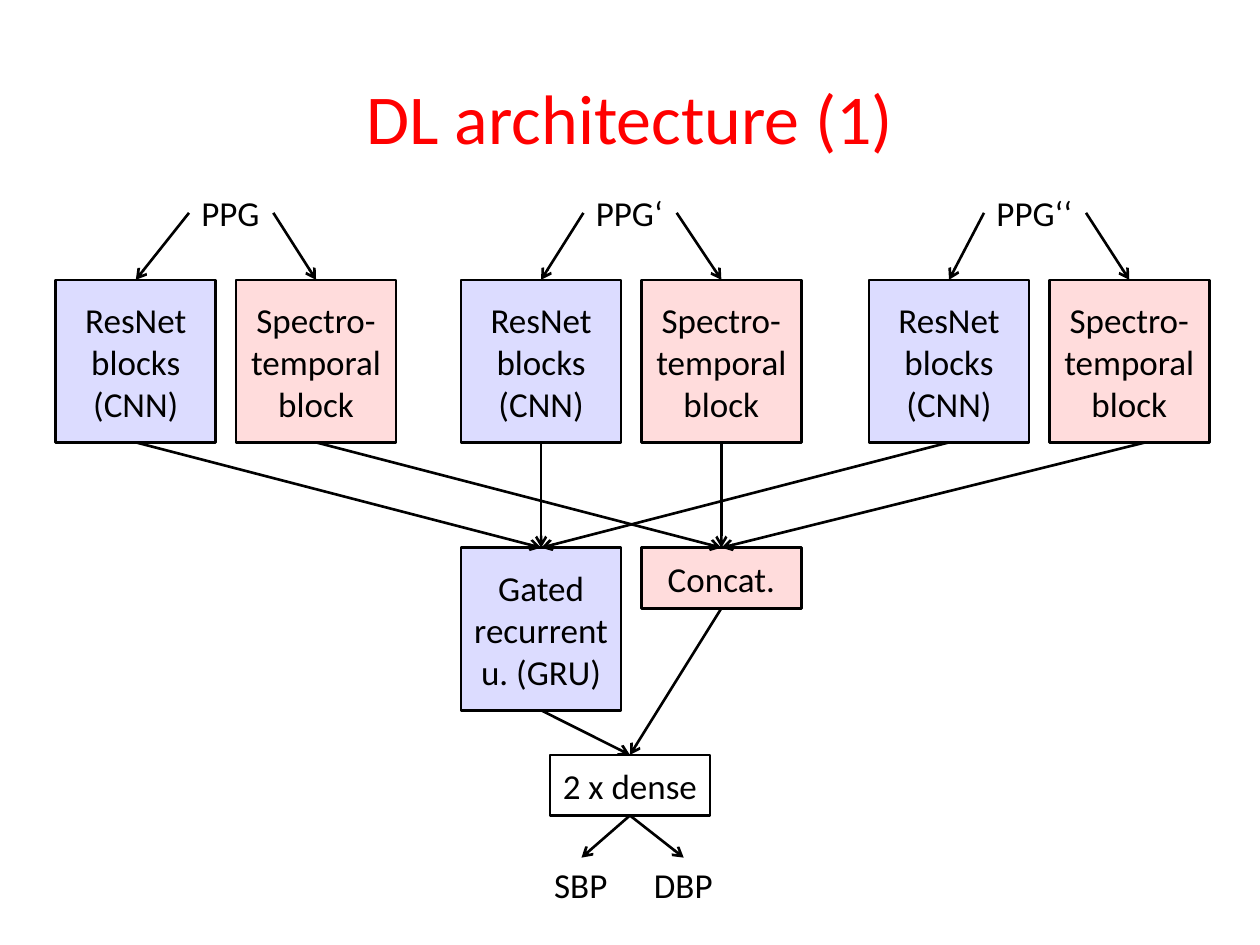
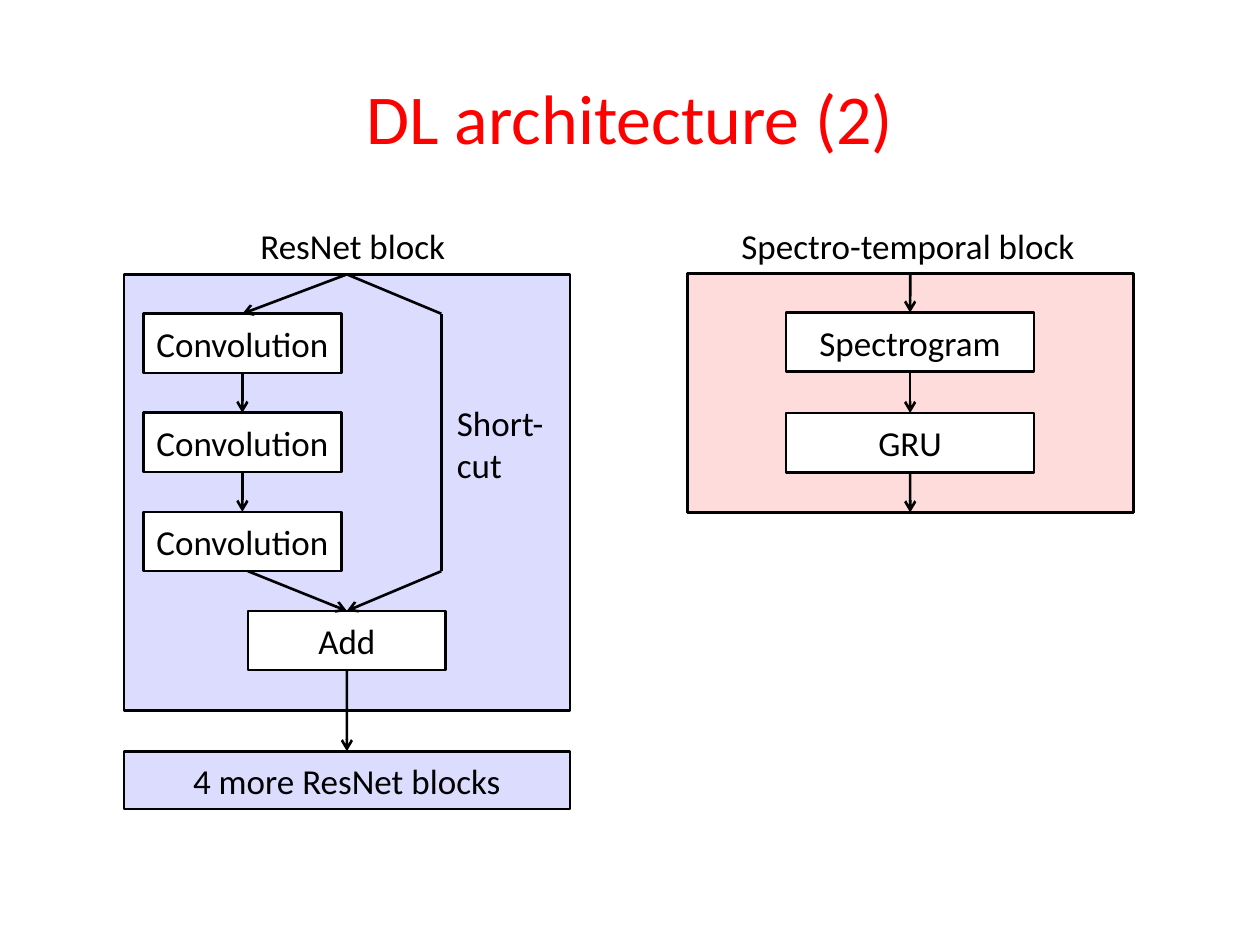
import pptx
import pptx.dml.color
import pptx.enum.shapes
import pptx.enum.text
import pptx.oxml
import pptx.oxml.ns
import pptx.util

BLUE, PINK, WHITE, BLACK, RED = "DCDCFF", "FFDCDC", "FFFFFF", "000000", "FF0000"
TOP, LEFT, BOTTOM, RIGHT = range(4)
BODY_FONT = {"name": "Calibri", "size": pptx.util.Pt(20)}
TITLE_FONT = {"name": "Calibri", "size": pptx.util.Pt(40)}
TITLE_PLACE = (36, 21.6, 648, 90)
LINE_WIDTH = 1.5
LABEL_HEIGHT = 31.7

BLOCK = (91.44, 92.9)
BAR = (91.44, 34.6)
PAIR_STEP = 103
BRANCH_TOP, MERGE_TOP = 159.9, 313
SIGNALS = [
    ("PPG", 108, 48.2, 31.9),
    ("PPG‘", 333.4, 53.3, 263.5),
    ("PPG‘‘", 562.3, 58.3, 496.6),
]
MERGE_LEFT = SIGNALS[1][3]

CONVOLUTION = (113.04, 33.9)
STAGE = (141.8, 33.9)
PANEL_WIDTH = 254.9
RESNET_LEFT, SPECTRO_LEFT, STAGE_LEFT = 70.8, 392.7, 449.2
CONVOLUTION_LEFT, ADD_LEFT = 82, 141.7
ROW_TOPS = [179.3 + 56.6 * row for row in range(4)]
SHORTCUT_X = 252.2


def overview():
    """Return the boxes, labels and links of the whole network."""
    boxes = {
        "GRU": ("Gated recurrent u. (GRU)", MERGE_LEFT, MERGE_TOP, *BLOCK, BLUE),
        "Concat": ("Concat.", MERGE_LEFT + PAIR_STEP, MERGE_TOP, *BAR, PINK),
        "Dense": ("2 x dense", 314.28, 431.4, *BAR, None),
    }
    labels = {
        "SBP": ("SBP", 309.6, 490.1, 45.4),
        "DBP": ("DBP", 366.6, 490.1, 48.2),
    }
    links = [
        (("GRU", BOTTOM), ("Dense", TOP)),
        (("Concat", BOTTOM), ("Dense", TOP)),
        (("Dense", BOTTOM), ("SBP", TOP)),
        (("Dense", BOTTOM), ("DBP", TOP)),
    ]
    for signal, label_left, label_width, left in SIGNALS:
        resnet, spectro = signal + " ResNet", signal + " spectro"
        labels[signal] = (signal, label_left, 105.8, label_width)
        boxes[resnet] = ("ResNet blocks\n(CNN)", left, BRANCH_TOP, *BLOCK, BLUE)
        boxes[spectro] = ("Spectro-temporal block", left + PAIR_STEP, BRANCH_TOP, *BLOCK, PINK)
        last = signal == SIGNALS[-1][0]
        spectro_exit = (654.5, BRANCH_TOP + BLOCK[1]) if last else (spectro, BOTTOM)
        links += [
            ((signal, LEFT), (resnet, TOP)),
            ((signal, RIGHT), (spectro, TOP)),
            ((resnet, BOTTOM), ("GRU", TOP)),
            (spectro_exit, ("Concat", TOP)),
        ]
    return boxes, labels, links, []


def block_details():
    """Return the boxes, labels and links inside the two block types."""
    boxes = {
        "ResNet panel": ("", RESNET_LEFT, 156.8, PANEL_WIDTH, 249.1, BLUE),
        "More blocks": ("4 more ResNet blocks", RESNET_LEFT, 429.3, PANEL_WIDTH, 33, BLUE),
        "Spectro panel": ("", SPECTRO_LEFT, 156.2, PANEL_WIDTH, 136.6, PINK),
        "Spectrogram": ("Spectrogram", STAGE_LEFT, 178.6, *STAGE, WHITE),
        "GRU": ("GRU", STAGE_LEFT, 236, *STAGE, WHITE),
        "Add": ("Add", ADD_LEFT, ROW_TOPS[3], *CONVOLUTION, WHITE),
    }
    for row, top in enumerate(ROW_TOPS[:3], 1):
        boxes[f"Convolution {row}"] = ("Convolution", CONVOLUTION_LEFT, top, *CONVOLUTION, WHITE)
    labels = {
        "ResNet heading": ("ResNet block", 141.7, 124.9, 121),
        "Spectro heading": ("Spectro-temporal block", 416.6, 124.9, 206.6),
        "Shortcut": ("Short-\vcut", 254, 225.6, 64.8),
    }
    shortcut_top = (SHORTCUT_X, ROW_TOPS[0])
    shortcut_bottom = (SHORTCUT_X, ROW_TOPS[2] + CONVOLUTION[1])
    links = [
        (("ResNet panel", TOP), ("Convolution 1", TOP)),
        (("Convolution 1", BOTTOM), ("Convolution 2", TOP)),
        (("Convolution 2", BOTTOM), ("Convolution 3", TOP)),
        ((ADD_LEFT, shortcut_bottom[1]), ("Add", TOP)),
        (shortcut_bottom, ("Add", TOP)),
        (("Add", BOTTOM), ("More blocks", TOP)),
        (("Spectro panel", TOP), ("Spectrogram", TOP)),
        (("Spectrogram", BOTTOM), ("GRU", TOP)),
        (("GRU", BOTTOM), ("Spectro panel", BOTTOM)),
    ]
    plain_lines = [
        (("ResNet panel", TOP), shortcut_top),
        (shortcut_top, shortcut_bottom),
    ]
    return boxes, labels, links, plain_lines


PAGES = [("DL architecture (1)", overview()), ("DL architecture (2)", block_details())]


def colour(code):
    """Turn a hex string into a colour."""
    return pptx.dml.color.RGBColor.from_string(code)


def points(*lengths):
    """Turn numbers into lengths in points."""
    return [pptx.util.Pt(length) for length in lengths]


def write(box, text, font, code, centred=True):
    """Fill a box with formatted paragraphs."""
    frame = box.text_frame
    frame.text = text
    for para in frame.paragraphs:
        if centred:
            para.alignment = pptx.enum.text.PP_ALIGN.CENTER
        for span in para.runs:
            for key, value in font.items():
                setattr(span.font, key, value)
            span.font.color.rgb = colour(code)


def outline(line):
    """Give a line the shared width and colour."""
    line.width = pptx.util.Pt(LINE_WIDTH)
    line.color.rgb = colour(BLACK)


def add_box(page, text, left, top, width, height, fill):
    """Add an outlined rectangle with centred text."""
    box = page.shapes.add_shape(
        pptx.enum.shapes.MSO_SHAPE.RECTANGLE, *points(left, top, width, height))
    box.shadow.inherit = False
    if fill:
        box.fill.solid()
        box.fill.fore_color.rgb = colour(fill)
    else:
        box.fill.background()
    outline(box.line)
    box.text_frame.vertical_anchor = pptx.enum.text.MSO_ANCHOR.MIDDLE
    if text:
        write(box, text, BODY_FONT, BLACK)
    return box


def add_label(page, text, left, top, width):
    """Add free text that does not wrap."""
    height = LABEL_HEIGHT + 24 * text.count("\v")
    box = page.shapes.add_textbox(*points(left, top, width, height))
    box.text_frame.word_wrap = False
    box.text_frame.auto_size = pptx.enum.text.MSO_AUTO_SIZE.SHAPE_TO_FIT_TEXT
    write(box, text, BODY_FONT, BLACK, centred=False)
    return box


def add_link(page, parts, start, end, arrow):
    """Draw a line between two box sides or free points."""
    free = [(0, 0) if isinstance(place[0], str) else place for place in (start, end)]
    link = page.shapes.add_connector(
        pptx.enum.shapes.MSO_CONNECTOR.STRAIGHT, *points(*free[0], *free[1]))
    for place, join in ((start, link.begin_connect), (end, link.end_connect)):
        if isinstance(place[0], str):
            join(parts[place[0]], place[1])
    outline(link.line)
    properties = link._element.spPr
    if arrow:
        head = pptx.oxml.parse_xml(
            f'<a:tailEnd {pptx.oxml.ns.nsdecls("a")} type="arrow"/>')
        properties.find(pptx.oxml.ns.qn("a:ln")).append(head)
    properties.append(pptx.oxml.parse_xml(f'<a:effectLst {pptx.oxml.ns.nsdecls("a")}/>'))


def add_page(deck, title, content):
    """Add a slide with its title and diagram."""
    boxes, labels, links, plain_lines = content
    page = deck.slides.add_slide(deck.slide_layouts[5])
    heading = page.shapes.title
    for key, value in zip(("left", "top", "width", "height"), points(*TITLE_PLACE)):
        setattr(heading, key, value)
    heading.text_frame.vertical_anchor = pptx.enum.text.MSO_ANCHOR.MIDDLE
    write(heading, title, TITLE_FONT, RED)
    parts = {name: add_box(page, *values) for name, values in boxes.items()}
    parts.update({name: add_label(page, *values) for name, values in labels.items()})
    for start, end in links:
        add_link(page, parts, start, end, arrow=True)
    for start, end in plain_lines:
        add_link(page, parts, start, end, arrow=False)


def main():
    """Build and save the deck."""
    deck = pptx.Presentation()
    deck.slide_width, deck.slide_height = points(720, 540)
    for title, content in PAGES:
        add_page(deck, title, content)
    deck.save("out.pptx")


if __name__ == "__main__":
    main()
